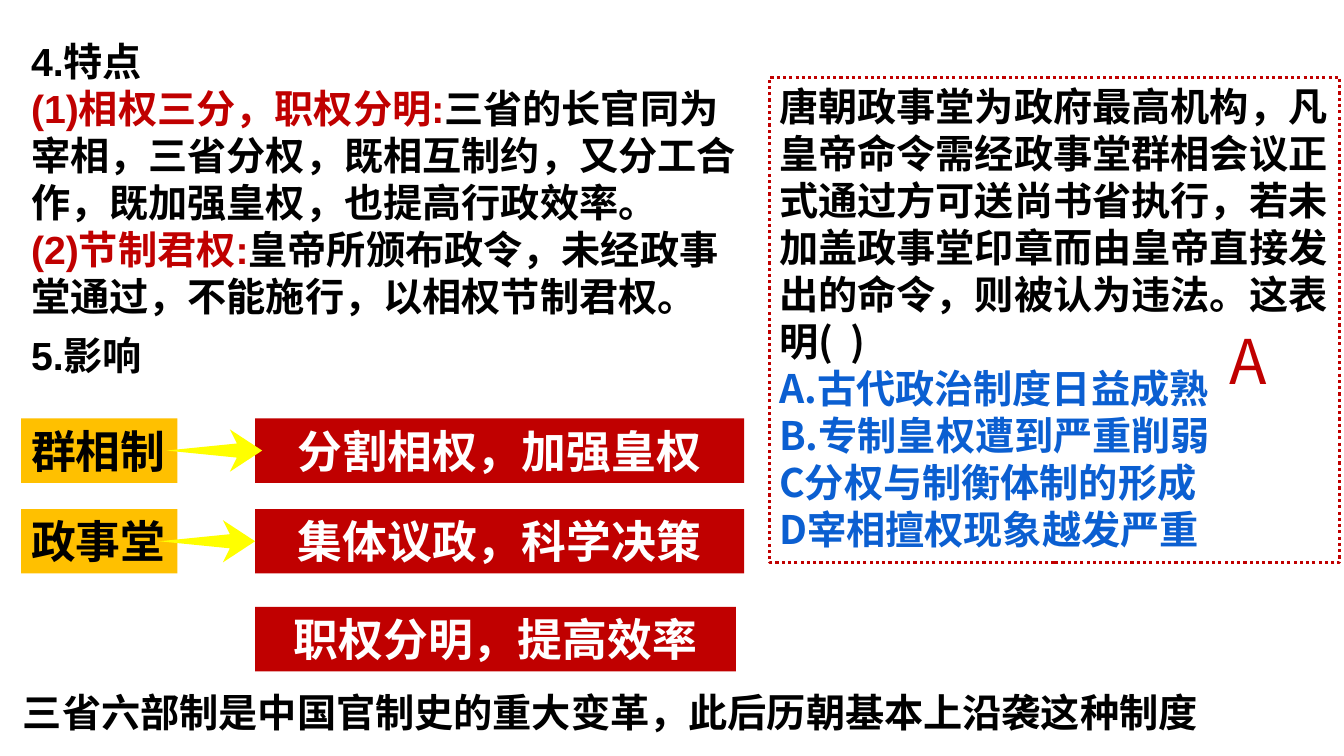
from dataclasses import dataclass

from lxml import etree
from pptx import Presentation
from pptx import util as u
from pptx.dml.color import RGBColor
from pptx.enum import dml, shapes, text
from pptx.oxml.ns import qn

COLORS = {
    "black": "000000",
    "white": "FFFFFF",
    "red": "C00000",
    "blue": "0B5FD1",
    "gold": "FFC000",
    "yellow": "FFFF00",
}
NOTO = "Noto Sans CJK SC"
LEAD = 1.2  # line height as a multiple of the text size

Run = tuple[str, str]  # words, colour name


@dataclass
class Box:
    left: float
    top: float
    width: float
    height: float


@dataclass
class Bar:
    words: str
    box: Box
    fill: str
    ink: str
    center: bool = True


def color(name: str) -> RGBColor:
    return RGBColor.from_string(COLORS[name])


def place(box: Box) -> list[u.Length]:
    return [u.Inches(n) for n in (box.left, box.top, box.width, box.height)]


def write(shape, lines: list[list[Run]], *, size: int = 28, font: str = NOTO,
          bold: bool = True, center: bool = False, wrap: bool = True) -> None:
    frame = shape.text_frame
    frame.word_wrap = wrap
    frame.auto_size = text.MSO_AUTO_SIZE.NONE
    frame.vertical_anchor = text.MSO_ANCHOR.TOP
    for i, line in enumerate(lines):
        para = frame.add_paragraph() if i else frame.paragraphs[0]
        para.alignment = text.PP_ALIGN.CENTER if center else text.PP_ALIGN.LEFT
        para.line_spacing = u.Pt(size * LEAD)
        for words, ink in line:
            run = para.add_run()
            run.text = words
            run.font.size = u.Pt(size)
            run.font.bold = bold
            run.font.name = font
            run.font.color.rgb = color(ink)
            # East Asian letters take their own typeface
            east = etree.SubElement(run.font._element, qn("a:ea"))
            east.set("typeface", NOTO)


def add_text(slide, box: Box, lines: list[list[Run]], **form) -> None:
    write(slide.shapes.add_textbox(*place(box)), lines, **form)


def add_rect(slide, box: Box):
    rect = slide.shapes.add_shape(shapes.MSO_SHAPE.RECTANGLE, *place(box))
    rect.shadow.inherit = False
    return rect


def add_bar(slide, bar: Bar) -> None:
    rect = add_rect(slide, bar.box)
    rect.fill.solid()
    rect.fill.fore_color.rgb = color(bar.fill)
    rect.line.fill.background()
    write(rect, [[(bar.words, bar.ink)]], size=32, center=bar.center,
          wrap=bar.center)


def add_arrow(slide, left: float, mid: float) -> None:
    # Offsets from the tail, in hundredths of an inch
    tail, *rest = [(0, 0), (70, -7), (63, -21), (95, 0), (63, 21), (70, 7)]
    x, y = round(left * 100), round(mid * 100)
    build = slide.shapes.build_freeform(x + tail[0], y + tail[1],
                                        scale=u.Inches(0.01))
    build.add_line_segments([(x + dx, y + dy) for dx, dy in rest], close=True)
    arrow = build.convert_to_shape()
    arrow.shadow.inherit = False
    arrow.fill.solid()
    arrow.fill.fore_color.rgb = color("yellow")
    arrow.line.fill.background()


TRAITS = [
    [("4.特点", "black")],
    [("(1)相权三分，职权分明:", "red"),
     ("三省的长官同为宰相，三省分权，既相互制约，又分工合作，"
      "既加强皇权，也提高行政效率。", "black")],
    [("(2)节制君权:", "red"),
     ("皇帝所颁布政令，未经政事堂通过，不能施行，以相权节制君权。", "black")],
]
ASK = ("唐朝政事堂为政府最高机构，凡皇帝命令需经政事堂群相会议正式通过"
       "方可送尚书省执行，若未加盖政事堂印章而由皇帝直接发出的命令，"
       "则被认为违法。这表明(  )")
PICKS = ["A.古代政治制度日益成熟", "B.专制皇权遭到严重削弱",
         "C分权与制衡体制的形成", "D宰相擅权现象越发严重"]
SUM = "三省六部制是中国官制史的重大变革，此后历朝基本上沿袭这种制度"

ROWS = [4.15, 5.05, 6.02]
TALL = 0.64
CAUSES = [Bar(words, Box(0.21, top, 1.55, TALL), "gold", "black", False)
          for words, top in zip(["群相制", "政事堂"], ROWS)]
EFFECTS = [Bar(words, Box(2.53, top, wide, TALL), "red", "white")
           for words, top, wide in zip(
               ["分割相权，加强皇权", "集体议政，科学决策", "职权分明，提高效率"],
               ROWS, [4.85, 4.85, 4.77])]


def main() -> None:
    deck = Presentation()
    deck.slide_width, deck.slide_height = u.Inches(13.33), u.Inches(7.5)
    slide = deck.slides.add_slide(deck.slide_layouts[6])

    # Traits of the system
    add_text(slide, Box(0.21, 0.32, 7.38, 2.93), TRAITS, font="Arial")

    # Question with its choices and the answer
    quiz = add_rect(slide, Box(7.63, 0.77, 5.66, 4.81))
    quiz.fill.background()
    quiz.line.color.rgb = color("red")
    quiz.line.width = u.Pt(2.25)
    quiz.line.dash_style = dml.MSO_LINE.ROUND_DOT
    write(quiz, [[(ASK, "black")]] + [[(pick, "blue")] for pick in PICKS])
    add_text(slide, Box(12.1, 3.15, 1.19, 0.84), [[("A", "red")]],
             size=44, bold=False)

    # Effects: causes, results and the arrows between them
    add_text(slide, Box(0.21, 3.24, 6.95, 1.04), [[("5.影响", "black")]],
             font="Arial")
    for bar in CAUSES + EFFECTS:
        add_bar(slide, bar)
    for left, top in zip([1.65, 1.58], ROWS):
        add_arrow(slide, left, top + TALL / 2)

    # Summary
    add_text(slide, Box(0.13, 6.78, 13.17, 0.57), [[(SUM, "black")]],
             font="Arial")

    deck.save("out.pptx")


if __name__ == "__main__":
    main()
